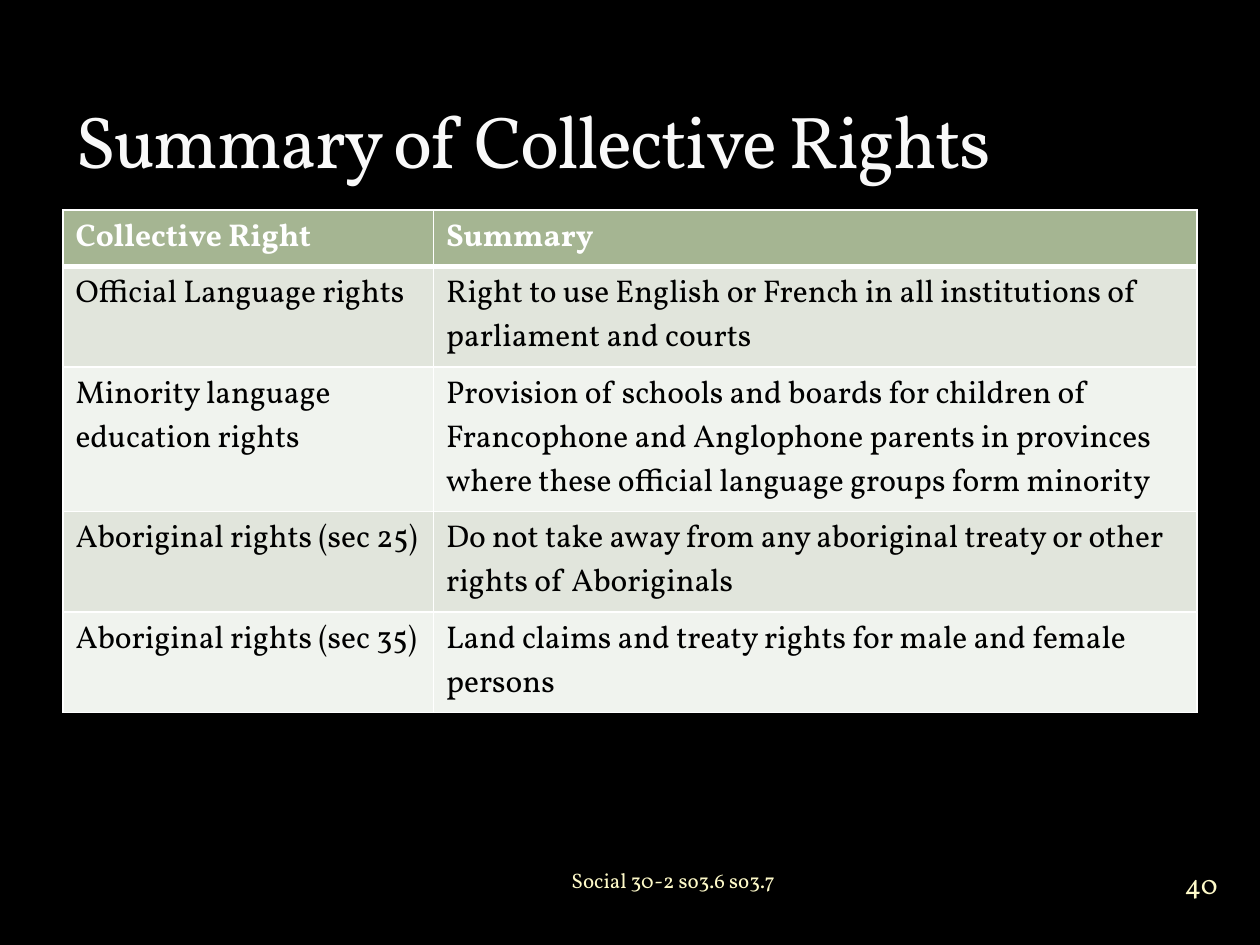
from lxml.etree import SubElement as Sub
from pptx import Presentation as Deck
from pptx.dml.color import RGBColor as Rgb
from pptx.enum.text import MSO_ANCHOR as Anchor, PP_ALIGN as Align
from pptx.oxml.ns import qn
from pptx.util import Pt

ROWS = [
    ("Collective Right", "Summary"),
    ("Official Language rights",
     "Right to use English or French in all institutions of parliament and courts"),
    ("Minority language education rights",
     "Provision of schools and boards for children of Francophone and Anglophone "
     "parents in provinces where these official language groups form minority"),
    ("Aboriginal rights (sec 25)",
     "Do not take away from any aboriginal treaty or other rights of Aboriginals"),
    ("Aboriginal rights (sec 35)",
     "Land claims and treaty rights for male and female persons"),
]


def color(code):
    return Rgb.from_string(code)


class Page:
    face = "Vollkorn"
    white, black, cream = "FFFFFF", "000000", "FEFAC9"
    head, bands = "A5B592", ("F0F3EE", "E1E5DC")

    def __init__(self, deck):
        self.slide = deck.slides.add_slide(deck.slide_layouts[6])
        fill = self.slide.background.fill
        fill.solid()
        fill.fore_color.rgb = color(self.black)

    def style(self, para, size, code, bold=False):
        font = para.font
        font.name, font.size, font.bold = self.face, Pt(size), bold
        font.color.rgb = color(code)

    def text(self, words, box, size, code, align, anchor=Anchor.MIDDLE,
             inset=None, space=0):
        frame = self.slide.shapes.add_textbox(*map(Pt, box)).text_frame
        frame.word_wrap = True
        frame.vertical_anchor = anchor
        if inset is not None:
            frame.margin_left = frame.margin_right = Pt(inset)
            frame.margin_top = frame.margin_bottom = Pt(inset)
        para = frame.paragraphs[0]
        run = para.add_run()
        run.text = words
        para.alignment = align
        self.style(para, size, code)
        if space:
            run.font._element.set("spc", str(space * 100))

    def edge(self, cell, side, width):
        line = Sub(cell._tc.get_or_add_tcPr(), qn(f"a:ln{side}"), w=str(Pt(width)))
        fill = Sub(line, qn("a:solidFill"))
        Sub(fill, qn("a:srgbClr"), val=self.white)

    def table(self, rows, left, top, cols, high):
        grid = self.slide.shapes.add_table(
            len(rows), len(cols), Pt(left), Pt(top),
            Pt(sum(cols)), Pt(sum(high))).table
        for col, width in zip(grid.columns, cols):
            col.width = Pt(width)
        for r, words in enumerate(rows):
            grid.rows[r].height = Pt(high[r])
            for c, word in enumerate(words):
                self.cell(grid.cell(r, c), word, r)

    def cell(self, cell, word, row):
        cell.text = word
        top = row == 0
        self.style(cell.text_frame.paragraphs[0], 18,
                   self.white if top else self.black, top)
        for side in "LRTB":
            thick = (top and side == "B") or (row == 1 and side == "T")
            self.edge(cell, side, 3 if thick else 1)
        cell.fill.solid()
        cell.fill.fore_color.rgb = color(self.head if top else self.bands[row % 2])


def main():
    deck = Deck()
    deck.slide_width, deck.slide_height = Pt(720), Pt(540)
    page = Page(deck)
    page.table(ROWS, 36, 120, (211.7, 436.3), (32, 57.5, 82.5, 57.5, 57.5))
    page.text("40", (662.4, 486.7, 48, 36), 16, page.cream, Align.CENTER, inset=0)
    page.text("Social 30-2 so3.6 so3.7", (168, 488, 282, 30), 12,
              page.cream, Align.RIGHT)
    page.text("Summary of Collective Rights", (36, 12, 648, 96), 42,
              "F9F9F9", Align.LEFT, Anchor.BOTTOM, space=-1)
    deck.save("out.pptx")


if __name__ == "__main__":
    main()
